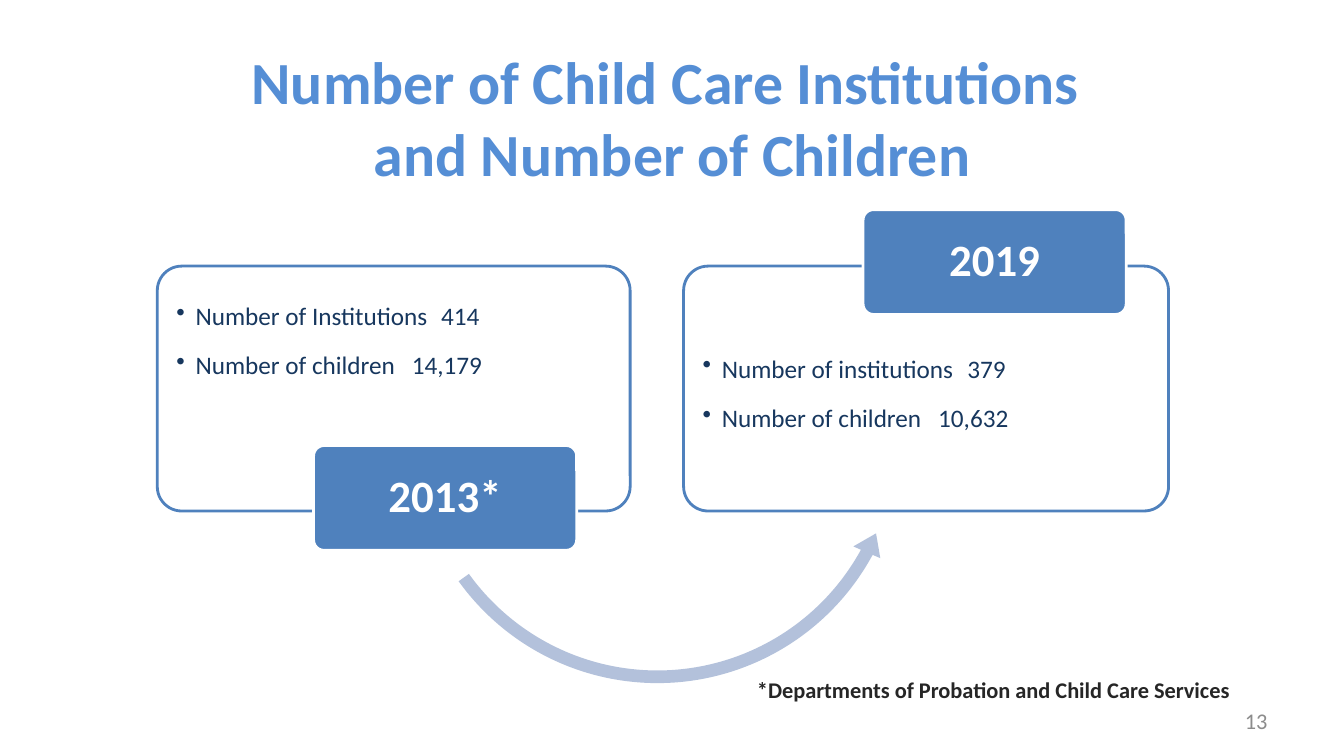
import pptx
import pptx.dml.color
import pptx.enum.shapes
import pptx.enum.text
import pptx.util
from lxml import etree

Inches = pptx.util.Inches
Pt = pptx.util.Pt
ALIGN = pptx.enum.text.PP_ALIGN
ANCHOR = pptx.enum.text.MSO_ANCHOR
SHAPE = pptx.enum.shapes.MSO_SHAPE

FONT = "Calibri"
COLORS = {
    "title": "558ED5",
    "accent": "4F81BD",
    "arrow": "B3C1DB",
    "body": "17375E",
    "footnote": "262626",
    "number": "8C8C8C",
    "white": "FFFFFF",
}


def rgb(name):
    return pptx.dml.color.RGBColor.from_string(COLORS[name])


def format_paragraph(paragraph, size, color, bold=False, align=ALIGN.LEFT):
    paragraph.alignment = align
    for run in paragraph.runs:
        run.font.name = FONT
        run.font.size = Pt(size)
        run.font.bold = bold
        run.font.color.rgb = rgb(color)


def prepare_frame(text_frame, anchor, horizontal=0.1, vertical=0.05):
    text_frame.word_wrap = True
    text_frame.auto_size = pptx.enum.text.MSO_AUTO_SIZE.NONE
    text_frame.vertical_anchor = anchor
    text_frame.margin_left = text_frame.margin_right = Inches(horizontal)
    text_frame.margin_top = text_frame.margin_bottom = Inches(vertical)


def add_filled_shape(slide, kind, box, fill, line=None):
    shape = slide.shapes.add_shape(kind, *map(Inches, box))
    shape.shadow.inherit = False
    shape.fill.solid()
    shape.fill.fore_color.rgb = rgb(fill)
    if line:
        shape.line.color.rgb = rgb(line)
        shape.line.width = Pt(2)
    else:
        shape.line.fill.background()
    return shape


def add_rounded_box(slide, box, fill, line):
    shape = add_filled_shape(slide, SHAPE.ROUNDED_RECTANGLE, box, fill, line)
    shape.adjustments[0] = 0.1
    return shape


def set_bullet(paragraph):
    """Give the paragraph a hanging bullet and its tab distance."""
    properties = paragraph._p.get_or_add_pPr()
    properties.set("marL", str(Inches(0.19)))
    properties.set("indent", str(Inches(-0.19)))
    properties.set("defTabSz", str(Inches(0.875)))
    bullet = etree.SubElement(properties, pptx.oxml.ns.qn("a:buChar"))
    bullet.set("char", "•")


def add_title(slide, box, text):
    title = slide.shapes.title
    title.left, title.top, title.width, title.height = map(Inches, box)
    prepare_frame(title.text_frame, ANCHOR.MIDDLE)
    title.text_frame.text = text
    format_paragraph(title.text_frame.paragraphs[0], 42.7, "title", True, ALIGN.CENTER)


def add_bullets(slide, box, lines):
    text_frame = slide.shapes.add_textbox(*map(Inches, box)).text_frame
    prepare_frame(text_frame, ANCHOR.TOP, 0.14, 0.14)
    text_frame.text = "\n".join(lines)
    for paragraph in text_frame.paragraphs:
        set_bullet(paragraph)
        paragraph.line_spacing = 1.5
        paragraph.space_after = Pt(2.7)
        format_paragraph(paragraph, 18, "body")


def add_year_panel(slide, box, year, lines, badge_offset, text_offset):
    """Draw a panel with bullets and a year badge, both offset from its corner."""
    left, top, width, height = box
    add_rounded_box(slide, box, "white", "accent")
    add_bullets(slide, (left + 0.05, top + text_offset, width - 0.11, 1.79), lines)

    badge_left, badge_top = badge_offset
    badge = add_rounded_box(
        slide, (left + badge_left, top + badge_top, 2.61, 1.04), "accent", "white"
    )
    prepare_frame(badge.text_frame, ANCHOR.MIDDLE, 0.1, 0.07)
    badge.text_frame.text = year
    paragraph = badge.text_frame.paragraphs[0]
    paragraph.line_spacing = 0.9
    format_paragraph(paragraph, 32, "white", True, ALIGN.CENTER)


def add_change_arrow(slide, box):
    arrow = add_filled_shape(slide, SHAPE.LEFT_CIRCULAR_ARROW, box, "arrow")
    for index, value in enumerate((0.025, 3.041, 21.861, 91.309, 0.029)):
        arrow.adjustments[index] = value
    arrow.rotation = 352.1


def add_footer_text(slide, box, text, color, bold=False, margin=0.1):
    text_frame = slide.shapes.add_textbox(*map(Inches, box)).text_frame
    prepare_frame(text_frame, ANCHOR.MIDDLE, margin)
    text_frame.text = text
    format_paragraph(text_frame.paragraphs[0], 16, color, bold, ALIGN.RIGHT)


def main():
    presentation = pptx.Presentation()
    presentation.slide_width = Inches(13.33)
    presentation.slide_height = Inches(7.5)
    slide = presentation.slides.add_slide(presentation.slide_layouts[5])

    add_title(
        slide,
        (0.67, 0.53, 12, 1.25),
        "Number of Child Care Institutions \vand Number of Children",
    )
    add_change_arrow(slide, (4.01, 1.84, 5.02, 5.02))
    add_year_panel(
        slide,
        (1.56, 2.64, 4.69, 2.43),
        "2013*",
        ["Number of Institutions\t414", "Number of children   14,179"],
        badge_offset=(1.55, 1.78),
        text_offset=0.05,
    )
    add_year_panel(
        slide,
        (6.78, 2.64, 4.81, 2.43),
        "2019",
        ["Number of institutions \t379", "Number of children   10,632"],
        badge_offset=(1.78, -0.56),
        text_offset=0.57,
    )
    add_footer_text(slide, (9.56, 6.95, 3.11, 0.4), "13", "number")
    add_footer_text(
        slide,
        (3.33, 6.5, 9, 0.69),
        "*Departments of Probation and Child Care Services",
        "footnote",
        bold=True,
        margin=0.13,
    )
    presentation.save("out.pptx")


if __name__ == "__main__":
    main()
